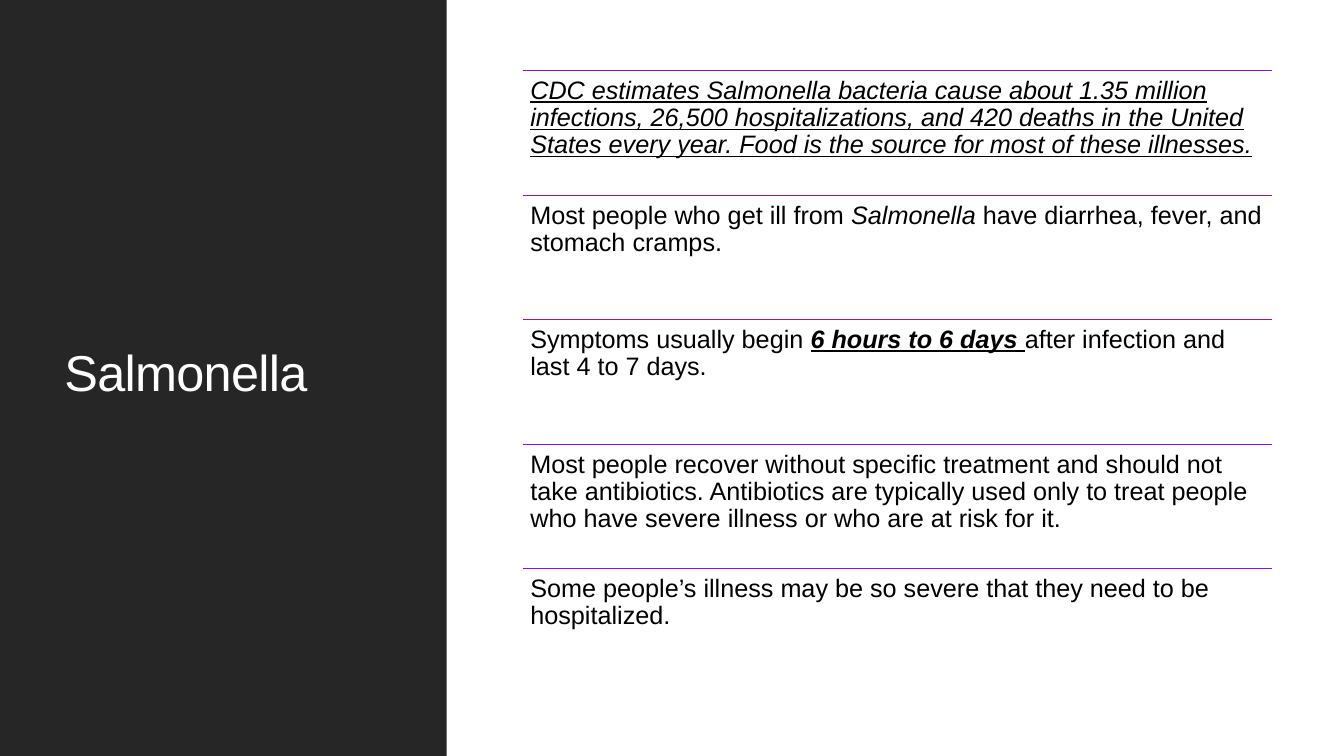
from dataclasses import dataclass

import pptx
import pptx.util
import pptx.dml.color
import pptx.enum.shapes
import pptx.enum.text
import pptx.oxml.ns
import lxml.etree

SCALE = 9144  # EMU per px, 100 px to the inch
WIDE, HIGH = 1333, 750
FONT = "Arial"
HEX = {"dark": "262626", "white": "FFFFFF", "black": "000000", "rule": "7E17D5"}

# Fact list: left edge, top, width and row height
LEFT, TOP, SPAN, ROW = 519, 70, 743, 124
STEP = 247  # distance between every second rule


@dataclass
class Run:
    text: str
    bold: bool = False
    slant: bool = False
    under: bool = False
    size: int = 18
    tint: str = "black"
    track: int = 0  # hundredths of a point


@dataclass
class Panel:
    x: int
    y: int
    w: int
    h: int
    tint: str


PANELS = [
    Panel(0, 0, WIDE, HIGH, "white"),
    Panel(0, 0, 443, HIGH, "dark"),
]
TITLE = [Run("Salmonella", size=36, tint="white", track=-50)]
FACTS = [
    [Run("CDC estimates Salmonella bacteria cause about 1.35 million infections, "
         "26,500 hospitalizations, and 420 deaths in the United States every year. "
         "Food is the source for most of these illnesses.", slant=True, under=True)],
    [Run("Most people who get ill from "),
     Run("Salmonella", slant=True),
     Run(" have diarrhea, fever, and stomach cramps.")],
    [Run("Symptoms usually begin "),
     Run("6 hours to 6 days ", bold=True, slant=True, under=True),
     Run("after infection and last 4 to 7 days.")],
    [Run("Most people recover without specific treatment and should not take "
         "antibiotics. Antibiotics are typically used only to treat people who "
         "have severe illness or who are at risk for it.")],
    [Run("Some people’s illness may be so severe that they need to be hospitalized.")],
]


def px(n: int) -> pptx.util.Emu:
    return pptx.util.Emu(n * SCALE)


def rgb(tint: str) -> pptx.dml.color.RGBColor:
    return pptx.dml.color.RGBColor.from_string(HEX[tint])


def draw_panel(shapes, item: Panel) -> None:
    box = shapes.add_shape(pptx.enum.shapes.MSO_SHAPE.RECTANGLE,
                           px(item.x), px(item.y), px(item.w), px(item.h))
    box.shadow.inherit = False
    box.fill.solid()
    box.fill.fore_color.rgb = rgb(item.tint)
    box.line.fill.background()


def draw_text(shapes, x: int, y: int, w: int, h: int, runs: list[Run],
              side: int, edge: int, anchor) -> None:
    frame = shapes.add_textbox(px(x), px(y), px(w), px(h)).text_frame
    frame.word_wrap = True
    frame.vertical_anchor = anchor
    frame.margin_left = frame.margin_right = px(side)
    frame.margin_top = frame.margin_bottom = px(edge)
    para = frame.paragraphs[0]
    para.line_spacing = 0.9
    for item in runs:
        run = para.add_run()
        run.text = item.text
        font = run.font
        font.name = FONT
        font.size = pptx.util.Pt(item.size)
        font.bold, font.italic, font.underline = item.bold, item.slant, item.under
        font.color.rgb = rgb(item.tint)
        if item.track:
            run._r.get_or_add_rPr().set("spc", str(item.track))


def draw_rule(shapes, x: int, y: int, w: int) -> None:
    rule = shapes.add_connector(pptx.enum.shapes.MSO_CONNECTOR.STRAIGHT,
                                px(x), px(y), px(x + w), px(y))
    rule.line.color.rgb = rgb("rule")
    rule.line.width = pptx.util.Pt(1.25)
    lxml.etree.SubElement(rule._element.spPr, pptx.oxml.ns.qn("a:effectLst"))


def main() -> None:
    deck = pptx.Presentation()
    deck.slide_width, deck.slide_height = px(WIDE), px(HIGH)
    slide = deck.slides.add_slide(deck.slide_layouts[6])
    anchor = pptx.enum.text.MSO_ANCHOR

    # Background and side panel
    for item in PANELS:
        draw_panel(slide.shapes, item)

    # Title
    draw_text(slide.shapes, 54, 57, 337, 631, TITLE, 10, 5, anchor.MIDDLE)

    # Ruled list of facts
    group = slide.shapes.add_group_shape()
    for i, runs in enumerate(FACTS):
        y = TOP + (i * STEP + 1) // 2
        draw_rule(group.shapes, LEFT, y, SPAN)
        draw_text(group.shapes, LEFT, y, SPAN, ROW, runs, 7, 7, anchor.TOP)

    deck.save("out.pptx")


if __name__ == "__main__":
    main()
